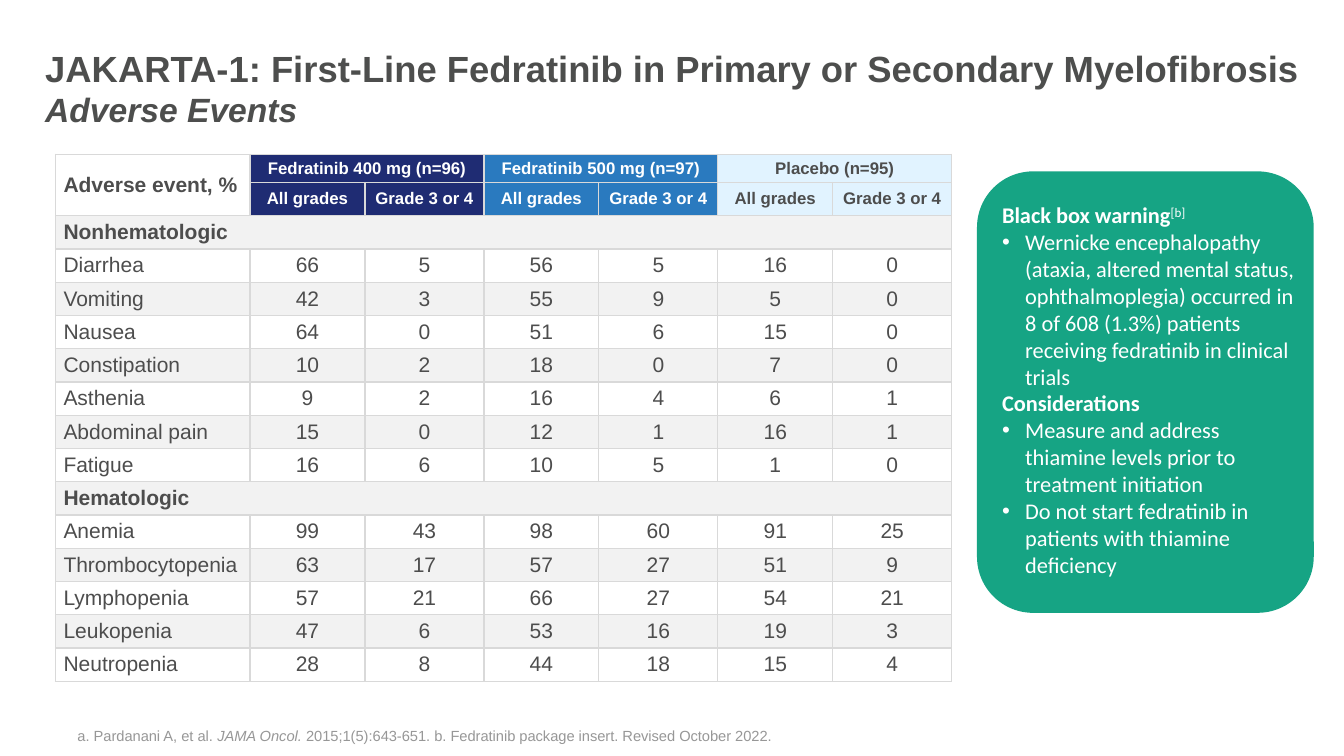
from lxml.etree import SubElement
from pptx import Presentation
from pptx.dml.color import RGBColor
from pptx.enum.shapes import MSO_SHAPE as Shape
from pptx.enum.text import MSO_ANCHOR as Anchor, PP_ALIGN as Align
from pptx.oxml.ns import qn
from pptx.util import Inches, Pt

DARK, WHITE, BAND, RULE = "4D4D4D", "FFFFFF", "F2F2F2", "D9D9D9"
LABEL_WIDTH, ARM_WIDTHS = 1.93, (1.14, 1.18)
HEADER_HEIGHTS, BODY_HEIGHT = (0.28, 0.32), 4.58
GRADES = ("All grades", "Grade 3 or 4")
ARMS = [
    ("Fedratinib 400 mg (n=96)", "1F2C73", WHITE),
    ("Fedratinib 500 mg (n=97)", "2A7ABF", WHITE),
    ("Placebo (n=95)", "E1F3FF", DARK),
]
EVENTS = [
    ("Nonhematologic",),
    ("Diarrhea", 66, 5, 56, 5, 16, 0),
    ("Vomiting", 42, 3, 55, 9, 5, 0),
    ("Nausea", 64, 0, 51, 6, 15, 0),
    ("Constipation", 10, 2, 18, 0, 7, 0),
    ("Asthenia", 9, 2, 16, 4, 6, 1),
    ("Abdominal pain", 15, 0, 12, 1, 16, 1),
    ("Fatigue", 16, 6, 10, 5, 1, 0),
    ("Hematologic",),
    ("Anemia", 99, 43, 98, 60, 91, 25),
    ("Thrombocytopenia", 63, 17, 57, 27, 51, 9),
    ("Lymphopenia", 57, 21, 66, 27, 54, 21),
    ("Leukopenia", 47, 6, 53, 16, 19, 3),
    ("Neutropenia", 28, 8, 44, 18, 15, 4),
]
WARNING = [
    ("Wernicke encephalopathy (ataxia, altered mental status, ophthalmoplegia) "
     "occurred in 8 of 608 (1.3%) patients receiving fedratinib in clinical trials"),
]
CONSIDERATIONS = [
    "Measure and address thiamine levels prior to treatment initiation",
    "Do not start fedratinib in patients with thiamine deficiency",
]


def rgb(color):
    return RGBColor.from_string(color)


def style(font, size, color, name="Arial", bold=None):
    font.size, font.name, font.bold = Pt(size), name, bold
    font.color.rgb = rgb(color)


def add_run(paragraph, text, **settings):
    run = paragraph.add_run()
    run.text = text
    for setting, value in settings.items():
        setattr(run.font, setting, value)
    return run


def add_text_box(slide, left, top, width, height, anchor):
    frame = slide.shapes.add_textbox(
        Inches(left), Inches(top), Inches(width), Inches(height)).text_frame
    frame.word_wrap = True
    frame.vertical_anchor = anchor
    return frame


def add_title(slide):
    title = add_text_box(slide, 0.35, 0.22, 12.77, 1.3, Anchor.MIDDLE).paragraphs[0]
    style(title.font, 26, "4D4E4D", bold=True)
    add_run(title, "JAKARTA-1: First-Line Fedratinib in Primary or Secondary Myelofibrosis ")
    add_run(title, "Adverse Events", size=Pt(24), italic=True)


def draw_borders(cell):
    """Draw the four edges; they must come before the fill in the cell's XML."""
    properties = cell._tc.get_or_add_tcPr()
    for edge in ("a:lnL", "a:lnR", "a:lnT", "a:lnB"):
        line = SubElement(properties, qn(edge), w=str(Pt(1)))
        SubElement(SubElement(line, qn("a:solidFill")), qn("a:srgbClr"), val=RULE)


def fill_cell(cell, text, fill, size=15, color=DARK, bold=False, align=Align.CENTER):
    cell.text = str(text)
    cell.fill.solid()
    cell.fill.fore_color.rgb = rgb(fill)
    paragraph = cell.text_frame.paragraphs[0]
    paragraph.alignment = align
    style(paragraph.font, size, color, bold=bold)


def add_table(slide):
    row_count, column_count = len(HEADER_HEIGHTS) + len(EVENTS), 1 + 2 * len(ARMS)
    widths = [LABEL_WIDTH, *ARM_WIDTHS * len(ARMS)]
    heights = [*HEADER_HEIGHTS, *[BODY_HEIGHT / len(EVENTS)] * len(EVENTS)]
    table = slide.shapes.add_table(
        row_count, column_count, Inches(0.55), Inches(1.53),
        Inches(sum(widths)), Inches(sum(heights))).table
    table.first_row = table.horz_banding = False
    for column, width in zip(table.columns, widths):
        column.width = Inches(width)
    for row, height in zip(table.rows, heights):
        row.height = Inches(height)
    for cell in table.iter_cells():
        cell.margin_left = cell.margin_right = Inches(0.08)
        cell.margin_top = cell.margin_bottom = Inches(0.04)
        cell.vertical_anchor = Anchor.MIDDLE
        draw_borders(cell)

    table.cell(0, 0).merge(table.cell(1, 0))
    fill_cell(table.cell(0, 0), "Adverse event, %", WHITE, bold=True, align=Align.LEFT)
    for arm, (name, fill, color) in enumerate(ARMS):
        first = 1 + 2 * arm
        table.cell(0, first).merge(table.cell(0, first + 1))
        fill_cell(table.cell(0, first), name, fill, 12, color, True)
        for offset, grade in enumerate(GRADES):
            fill_cell(table.cell(1, first + offset), grade, fill, 12, color, True)

    for row, (event, *rates) in enumerate(EVENTS, start=len(HEADER_HEIGHTS)):
        fill = WHITE if row % 2 else BAND
        if not rates:
            table.cell(row, 0).merge(table.cell(row, column_count - 1))
        fill_cell(table.cell(row, 0), event, fill, bold=not rates, align=Align.LEFT)
        for column, rate in enumerate(rates, start=1):
            fill_cell(table.cell(row, column), rate, fill)


def add_bullet(frame, text):
    paragraph = frame.add_paragraph()
    properties = paragraph._p.get_or_add_pPr()
    indent = Inches(0.23)
    properties.set("marL", str(indent))
    properties.set("indent", str(-indent))
    SubElement(properties, qn("a:buFont"), typeface="Arial")
    SubElement(properties, qn("a:buChar"), char="•")
    style(paragraph.font, 16, WHITE, "Calibri")
    add_run(paragraph, text)


def add_warning_panel(slide):
    panel = slide.shapes.add_shape(
        Shape.ROUNDED_RECTANGLE, Inches(9.69), Inches(1.7), Inches(3.34), Inches(4.38))
    panel.shadow.inherit = False
    panel.fill.solid()
    panel.fill.fore_color.rgb = rgb("16A484")
    panel.line.fill.background()

    frame = add_text_box(slide, 9.84, 1.95, 3.13, 3.87, Anchor.TOP)
    warning = frame.paragraphs[0]
    style(warning.font, 16, WHITE, "Calibri")
    add_run(warning, "Black box warning", bold=True)
    reference = add_run(warning, "[b]")
    reference._r.get_or_add_rPr().set("baseline", "30000")
    for point in WARNING:
        add_bullet(frame, point)
    considerations = frame.add_paragraph()
    style(considerations.font, 16, WHITE, "Calibri", bold=True)
    add_run(considerations, "Considerations")
    for point in CONSIDERATIONS:
        add_bullet(frame, point)


def add_references(slide):
    references = add_text_box(slide, 0.67, 6.95, 11.75, 0.48, Anchor.BOTTOM).paragraphs[0]
    style(references.font, 10.5, "979797")
    add_run(references, "a. Pardanani A, et al. ")
    add_run(references, "JAMA Oncol. ", italic=True)
    add_run(references, "2015;1(5):643-651. b. Fedratinib package insert. Revised October 2022.")


def main():
    presentation = Presentation()
    presentation.slide_width, presentation.slide_height = Inches(13.33), Inches(7.5)
    slide = presentation.slides.add_slide(presentation.slide_layouts[6])
    add_title(slide)
    add_table(slide)
    add_warning_panel(slide)
    add_references(slide)
    presentation.save("out.pptx")


if __name__ == "__main__":
    main()
